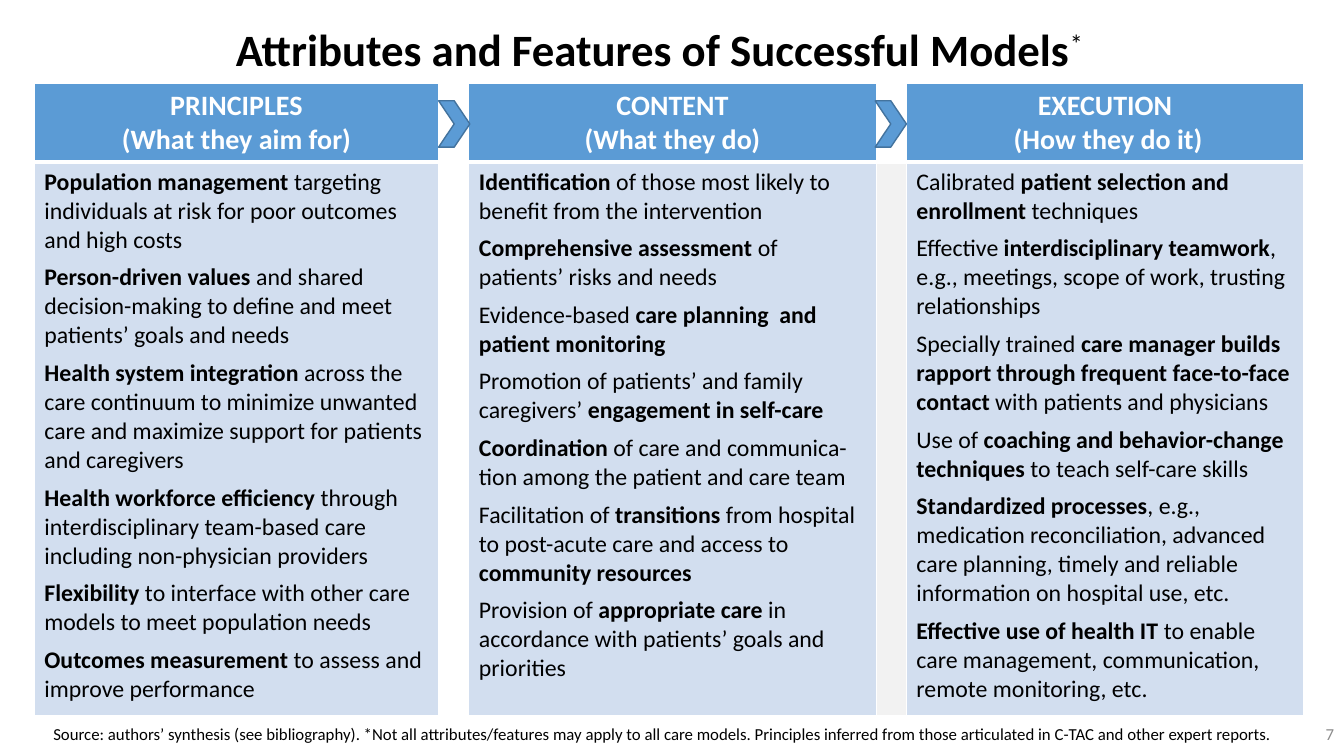
import pptx
import pptx.util
import pptx.dml.color
import pptx.enum.shapes
import pptx.enum.text
import pptx.oxml.ns
import lxml.etree

Inches = pptx.util.Inches
Pt = pptx.util.Pt
ALIGN = pptx.enum.text.PP_ALIGN
ANCHOR = pptx.enum.text.MSO_ANCHOR
BLUE, PALE, GREY, WHITE, BLACK = "5B9BD5", "D2DEEF", "F2F2F2", "FFFFFF", "000000"

HEADS = [
    ["PRINCIPLES", "(What they aim for)"],
    ["CONTENT", "(What they do)"],
    ["EXECUTION", " (How they do it)"],
]
# Text between bars is bold.
POINTS = [
    [
        "|Population management |targeting individuals at risk for poor outcomes and high costs",
        "|Person-driven values |and shared decision-making to define and meet patients’ goals and needs",
        "|Health system integration |across the care continuum to minimize unwanted care and maximize support for patients and caregivers",
        "|Health workforce efficiency |through interdisciplinary team-based care including non-physician providers",
        "|Flexibility| to interface with other care models to meet population needs",
        "|Outcomes measurement |to assess and improve performance",
    ],
    [
        "|Identification| of those most likely to benefit from the intervention",
        "|Comprehensive assessment |of patients’ risks and needs",
        "Evidence-based |care planning  and patient monitoring",
        "Promotion of patients’ and family caregivers’ |engagement in self-care",
        "|Coordination| of care and communica-tion among the patient and care team",
        "Facilitation of |transitions| from hospital to post-acute care and access to |community resources",
        "Provision of |appropriate care |in accordance with patients’ goals and priorities",
    ],
    [
        "Calibrated |patient selection and enrollment |techniques",
        "Effective| interdisciplinary teamwork|, e.g., meetings, scope of work, trusting relationships",
        "Specially trained |care manager builds rapport through frequent face-to-face contact |with patients and physicians",
        "Use of |coaching and behavior-change techniques |to teach self-care skills",
        "|Standardized processes|, e.g., medication reconciliation, advanced care planning, timely and reliable information on hospital use, etc.",
        "|Effective use of health IT |to enable care management, communication, remote monitoring, etc.",
    ],
]


def paint(color):
    """Turn a hex string into a colour."""
    return pptx.dml.color.RGBColor.from_string(color)


def style(para, size, color, align=ALIGN.LEFT):
    """Set the font and alignment of a paragraph."""
    para.font.name = "Calibri"
    para.font.size = Pt(size)
    para.font.color.rgb = paint(color)
    para.alignment = align


def write(para, text):
    """Add runs to a paragraph, bold between bars."""
    for i, part in enumerate(text.split("|")):
        if part:
            run = para.add_run()
            run.text = part
            run.font.bold = i % 2 == 1


def fill_text(frame, lines, size, color, align=ALIGN.LEFT, gap=0):
    """Write lines as the paragraphs of a text frame."""
    for i, line in enumerate(lines):
        para = frame.add_paragraph() if i else frame.paragraphs[0]
        style(para, size, color, align)
        para.space_before = para.space_after = Pt(gap)
        write(para, line)


def add_text(slide, box, text, size, color, align=ALIGN.LEFT, anchor=ANCHOR.TOP, wrap=True):
    """Add a text box and return its paragraph."""
    frame = slide.shapes.add_textbox(*map(Inches, box)).text_frame
    frame.word_wrap = wrap
    frame.vertical_anchor = anchor
    fill_text(frame, [text], size, color, align)
    return frame.paragraphs[0]


def add_title(slide):
    """Add the title with its raised star."""
    para = add_text(slide, (0.79, 0.22, 11.5, 0.6), "|Attributes and Features of Successful Models|*",
                    32, BLACK, ALIGN.CENTER, ANCHOR.MIDDLE)
    para.line_spacing = 0.9
    para.runs[-1].font._element.set("baseline", "30000") if hasattr(para.runs[-1].font, "_element") \
        else para.runs[-1]._r.get_or_add_rPr().set("baseline", "30000")


def edge(cell, top, base):
    """Give a cell white borders, with top and bottom widths in points."""
    props = cell._tc.get_or_add_tcPr()
    qn = pptx.oxml.ns.qn
    for side, width in (("L", 1), ("R", 1), ("T", top), ("B", base)):
        line = lxml.etree.SubElement(props, qn("a:ln" + side), w=str(Pt(width)))
        solid = lxml.etree.SubElement(line, qn("a:solidFill"))
        lxml.etree.SubElement(solid, qn("a:srgbClr"), val=WHITE)


def shade(cell, color):
    """Fill a cell, or clear it when no colour is given."""
    if color:
        cell.fill.solid()
        cell.fill.fore_color.rgb = paint(color)
    else:
        cell.fill.background()


def add_grid(slide):
    """Add the table of three columns with gaps between them."""
    box = map(Inches, (0.34, 0.83, 12.59, 6.26))
    table = slide.shapes.add_table(2, 5, *box).table
    for col, width in zip(table.columns, (4.01, 0.3, 4.04, 0.3, 3.94)):
        col.width = Inches(width)
    for row, height in zip(table.rows, (0.77, 5.49)):
        row.height = Inches(height)
    fills = ((BLUE, None, BLUE, None, BLUE), (PALE, None, PALE, GREY, PALE))
    for r, colors in enumerate(fills):
        for c, color in enumerate(colors):
            edge(table.cell(r, c), 1 if r == 0 else 3, 3 if r == 0 else 1)
            shade(table.cell(r, c), color)
    for i, (head, points) in enumerate(zip(HEADS, POINTS)):
        names = ["|" + line for line in head]
        fill_text(table.cell(0, 2 * i).text_frame, names, 20, WHITE, ALIGN.CENTER)
        fill_text(table.cell(1, 2 * i).text_frame, points, 17, BLACK, gap=3)


def add_arrow(slide, left):
    """Add a chevron between two headings."""
    kind = pptx.enum.shapes.MSO_SHAPE.CHEVRON
    shape = slide.shapes.add_shape(kind, *map(Inches, (left, 1, 0.31, 0.46)))
    shape.shadow.inherit = False
    shape.fill.solid()
    shape.fill.fore_color.rgb = paint(BLUE)
    shape.line.color.rgb = paint("43739E")
    shape.line.width = Pt(1)


def main():
    """Build the slide and save it."""
    deck = pptx.Presentation()
    deck.slide_width, deck.slide_height = Inches(13.33), Inches(7.5)
    slide = deck.slides.add_slide(deck.slide_layouts[6])
    add_grid(slide)
    add_text(slide, (0.43, 7.13, 12.71, 0.3),
             "Source: authors’ synthesis (see bibliography). *Not all attributes/features may apply to all care models. "
             "Principles inferred from those articulated in C-TAC and other expert reports.",
             12, BLACK, wrap=False)
    add_text(slide, (10.33, 7.08, 3, 0.4), "7", 12, "8C8C8C", ALIGN.RIGHT, ANCHOR.MIDDLE)
    add_title(slide)
    for left in (4.35, 8.68):
        add_arrow(slide, left)
    deck.save("out.pptx")


if __name__ == "__main__":
    main()
